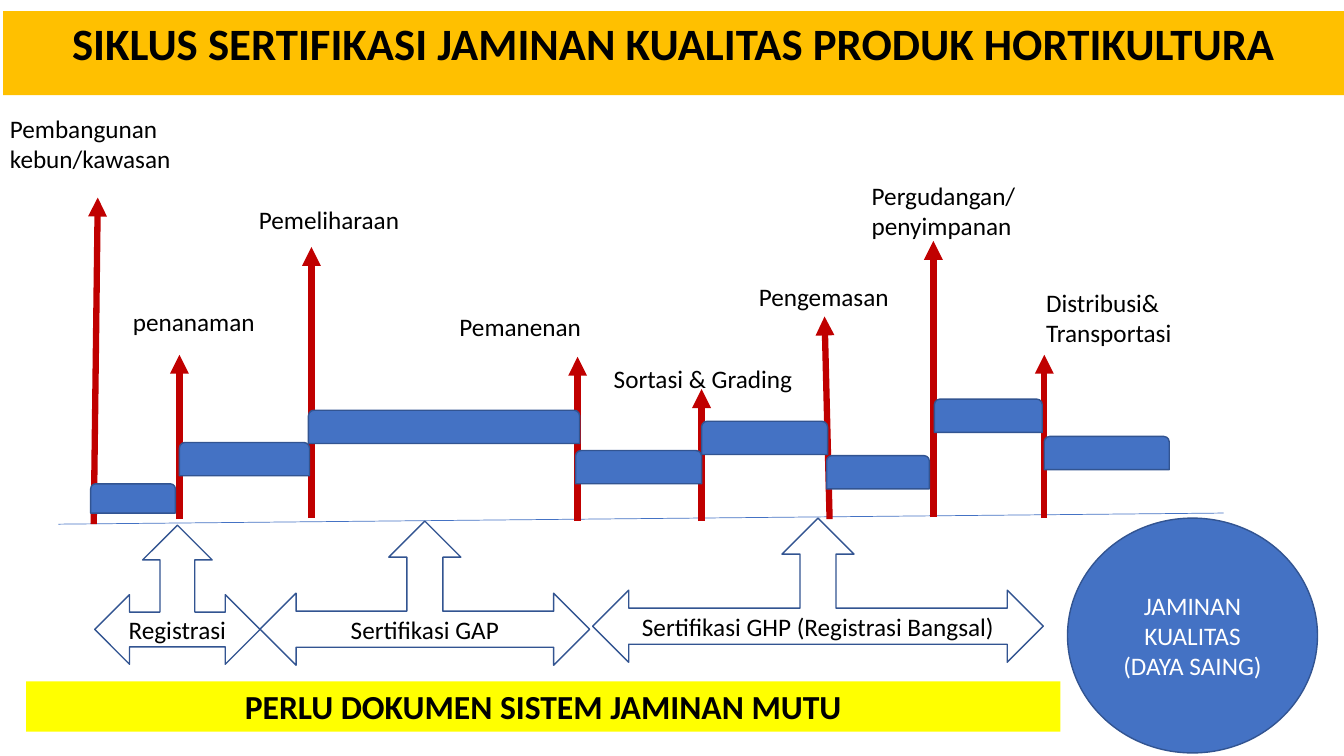
from typing import NamedTuple

from lxml.etree import SubElement
from pptx import Presentation
from pptx.dml.color import RGBColor
from pptx.enum.shapes import MSO_CONNECTOR, MSO_SHAPE
from pptx.enum.text import MSO_ANCHOR, MSO_AUTO_SIZE, PP_ALIGN
from pptx.oxml.ns import qn
from pptx.util import Inches, Pt

CELL = 0.1  # inches per grid column and row
COLUMNS, ROWS = 133.33, 75
BLUE, OUTLINE, RED = "4472C4", "325491", "C00000"
ORANGE, YELLOW, BLACK, WHITE = "FFC000", "FFFF00", "000000", "FFFFFF"
BAR_HEIGHT, LINE_HEIGHT, LABEL_PADDING = 3.3, 3.05, 1


class Box(NamedTuple):
    left: float
    top: float
    width: float
    height: float

    def inner(self, left, top, width, height):
        return Box(self.left + left, self.top + top, width, height)


class Stage(NamedTuple):
    label: str
    label_at: tuple  # left, top, width
    base: tuple
    tip: tuple
    bar: tuple  # left, top, width


STAGES = [
    Stage("Pembangunan kebun/kawasan", (0, 0.7, 19.3), (9.3, 42), (9.7, 9.6), (9, 38, 8.4)),
    Stage("penanaman", (12.2, 19.9, 14.3), (17.8, 41.5), (17.8, 25.2), (17.8, 33.9, 12.9)),
    Stage("Pemeliharaan", (24.7, 9.8, 16.7), (30.9, 41.4), (30.9, 14.5), (30.6, 30.7, 26.9)),
    Stage("Pemanenan", (44.6, 20.4, 14.2), (57.3, 41.7), (57.3, 25.4), (57.1, 34.7, 12.5)),
    Stage("Sortasi & Grading", (59.9, 25.5, 19.9), (69.6, 41.7), (69.6, 28.6), (69.6, 31.8, 12.5)),
    Stage("Pengemasan", (74.3, 17.4, 15), (82.3, 41.5), (81.8, 21.4), (82, 35.2, 10.2)),
    Stage("Pergudangan/\npenyimpanan", (85.5, 7.4, 16.4), (92.6, 41.3), (92.6, 13.9), (92.7, 29.6, 10.7)),
    Stage("Distribusi&\nTransportasi", (102.8, 18, 14.6), (103.6, 41.4), (103.6, 25.2), (103.6, 33.3, 12.4)),
]

# label, left, top, width, height
CERTIFICATIONS = [
    ("Sertifikasi GAP", 16.4, 0.3, 32.7, 14.3),
    ("Sertifikasi GHP (Registrasi Bangsal)", 49.4, 0, 44.7, 14.3),
    ("Registrasi", 0, 0.7, 16.4, 13.8),
]


def cells(count):
    return Inches(count * CELL)


def color(hex_code):
    return RGBColor.from_string(hex_code)


def write(owner, text, size=18, ink=BLACK, bold=False, align=PP_ALIGN.CENTER,
          anchor=MSO_ANCHOR.MIDDLE, wrap=True, grow=False):
    frame = owner.text_frame
    frame.text = text
    frame.word_wrap = wrap
    frame.vertical_anchor = anchor
    frame.auto_size = MSO_AUTO_SIZE.SHAPE_TO_FIT_TEXT if grow else MSO_AUTO_SIZE.NONE
    for paragraph in frame.paragraphs:
        paragraph.alignment = align
        font = paragraph.runs[0].font
        font.name, font.size, font.bold = "Calibri", Pt(size), bold
        font.color.rgb = color(ink)


def add_block(slide, kind, box, fill=None, outline=None):
    block = slide.shapes.add_shape(kind, *map(cells, box))
    block.shadow.inherit = False
    if fill:
        block.fill.solid()
        block.fill.fore_color.rgb = color(fill)
    else:
        block.fill.background()
    if outline:
        block.line.color.rgb = color(outline)
        block.line.width = Pt(1)
    else:
        block.line.fill.background()
    return block


def add_line(slide, box, start, end, ink, width, arrow=False):
    """Draw a line between two points counted from the box's top left."""
    points = [cells(offset + place) for point in (start, end)
              for offset, place in zip((box.left, box.top), point)]
    line = slide.shapes.add_connector(MSO_CONNECTOR.STRAIGHT, *points)
    line.line.color.rgb = color(ink)
    line.line.width = Pt(width)
    if arrow:
        SubElement(line.line._get_or_add_ln(), qn("a:tailEnd"), type="triangle")
    SubElement(line._element.spPr, qn("a:effectLst"))


def add_title(slide, box):
    title = slide.shapes.title
    title.left, title.top, title.width, title.height = map(cells, box)
    title.fill.solid()
    title.fill.fore_color.rgb = color(ORANGE)
    write(title, "SIKLUS SERTIFIKASI JAMINAN KUALITAS PRODUK HORTIKULTURA",
          size=32, bold=True, anchor=MSO_ANCHOR.TOP, grow=True)


def add_stage_label(slide, box, stage):
    left, top, width = stage.label_at
    wraps = stage is STAGES[0]
    lines = 2 if wraps else stage.label.count("\n") + 1
    place = box.inner(left, top, width, lines * LINE_HEIGHT + LABEL_PADDING)
    label = slide.shapes.add_textbox(*map(cells, place))
    write(label, stage.label, align=PP_ALIGN.LEFT, anchor=MSO_ANCHOR.TOP,
          wrap=wraps, grow=True)


def add_timeline(slide, box):
    add_line(slide, box, (5.8, box.height), (121.4, box.height - 1.1), BLUE, 0.5)
    for stage in STAGES:
        add_line(slide, box, stage.base, stage.tip, RED, 4.5, arrow=True)
        add_stage_label(slide, box, stage)
    for stage in STAGES:
        height = 2.9 if stage is STAGES[0] else BAR_HEIGHT
        add_block(slide, MSO_SHAPE.ROUND_2_SAME_RECTANGLE,
                  box.inner(*stage.bar, height), BLUE, OUTLINE)


def add_certifications(slide, box):
    for label, *place in CERTIFICATIONS:
        arrow = add_block(slide, MSO_SHAPE.LEFT_RIGHT_UP_ARROW,
                          box.inner(*place), outline=OUTLINE)
        write(arrow, label)


def add_goal(slide, box):
    goal = add_block(slide, MSO_SHAPE.OVAL, box, BLUE, OUTLINE)
    write(goal, "JAMINAN KUALITAS (DAYA SAING)", ink=WHITE)


def add_requirement(slide, box):
    requirement = add_block(slide, MSO_SHAPE.RECTANGLE, box, YELLOW)
    write(requirement, "PERLU DOKUMEN SISTEM JAMINAN MUTU", size=24, bold=True,
          anchor=MSO_ANCHOR.TOP, grow=True)


def main():
    deck = Presentation()
    deck.slide_width, deck.slide_height = cells(COLUMNS), cells(ROWS)
    slide = deck.slides.add_slide(deck.slide_layouts[5])
    add_timeline(slide, Box(0, 10, COLUMNS, 42))
    add_certifications(slide, Box(9.4, 51.4, 94.1, 14.6))
    add_goal(slide, Box(105.9, 51.4, 24.8, 23.3))
    add_title(slide, Box(0.3, 1.1, 133.1, 6.4))
    add_requirement(slide, Box(2.6, 67.6, 102.6, 5))
    deck.save("out.pptx")


if __name__ == "__main__":
    main()
